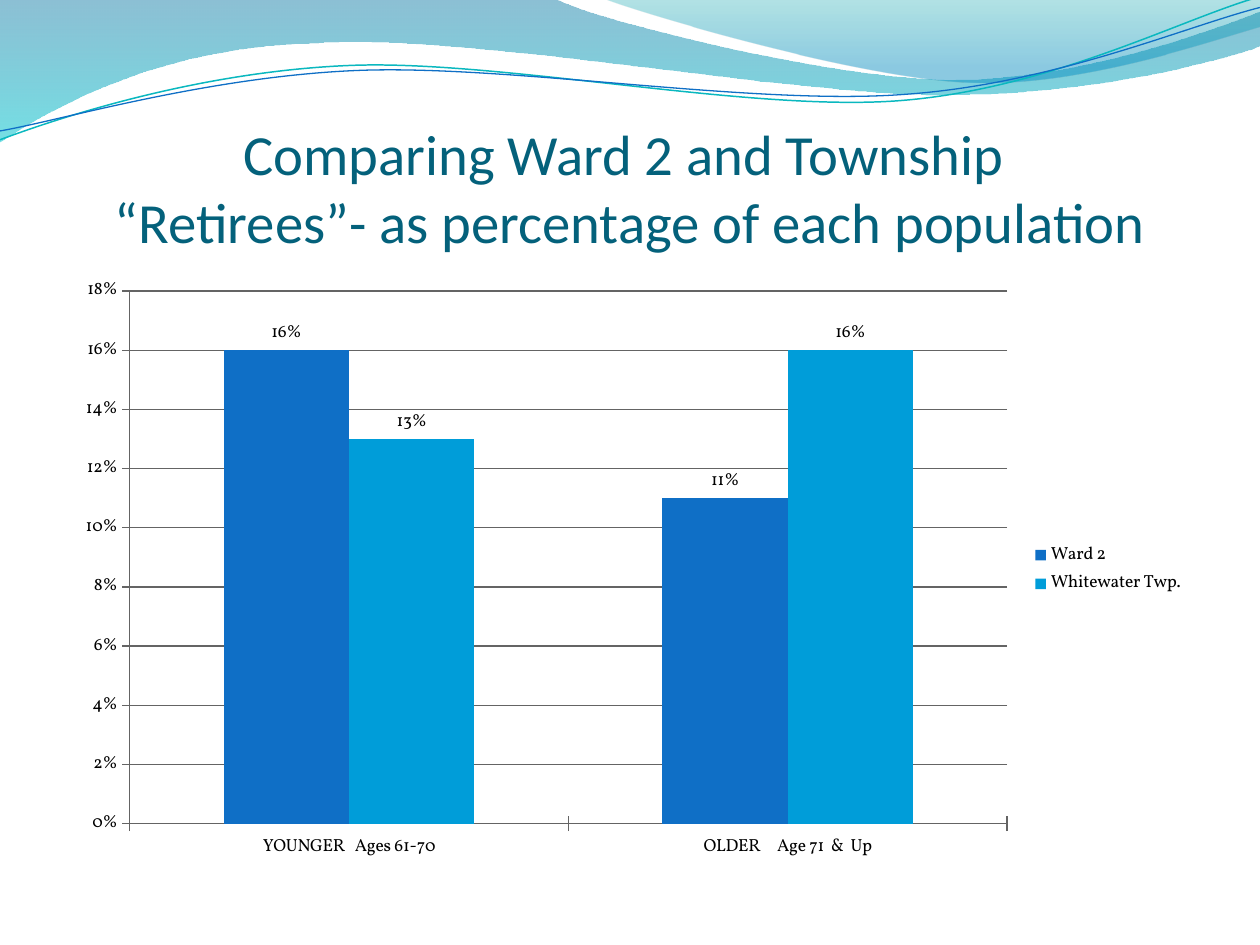
from math import cos, radians, sin

from lxml import etree
from pptx import Presentation
from pptx.chart.data import CategoryChartData
from pptx.dml.color import RGBColor
from pptx.enum.chart import XL_CHART_TYPE, XL_LABEL_POSITION, XL_LEGEND_POSITION, XL_TICK_MARK
from pptx.enum.text import MSO_ANCHOR, PP_ALIGN
from pptx.oxml.ns import qn
from pptx.util import Inches, Pt

CENTER, BOTTOM = PP_ALIGN.CENTER, MSO_ANCHOR.BOTTOM
COLUMNS = XL_CHART_TYPE.COLUMN_CLUSTERED
RIGHT, CROSS = XL_LEGEND_POSITION.RIGHT, XL_TICK_MARK.CROSS
OUTSIDE = XL_LABEL_POSITION.OUTSIDE_END
TILT = 2.7
rgb = RGBColor.from_string

prs = Presentation()
prs.slide_width, prs.slide_height = Inches(10), Inches(7.5)
col, row = prs.slide_width / 10, prs.slide_height / 7.5
s = prs.slides.add_slide(prs.slide_layouts[6])


def add_wave(shapes, start, segments, close=False, tilt=0, center=(0, 0)):
    co, si = cos(radians(tilt)), sin(radians(tilt))
    cx, cy = center
    placed = []
    for seg in [start] + segments:
        pairs = [(x - cx, y - cy) for x, y in zip(seg[::2], seg[1::2])]
        placed.append([(round((cx + x * co - y * si) * col), round((cy + x * si + y * co) * row))
                       for x, y in pairs])
    fb = shapes.build_freeform(*placed[0][0])
    fb.add_line_segments([points[-1] for points in placed[1:]], close=close)
    sp = fb.convert_to_shape()
    for node, points in zip(list(sp.element.spPr.iter(qn("a:lnTo"))), placed[1:]):
        if len(points) == 3:
            curve = etree.Element(qn("a:cubicBezTo"))
            for x, y in points:
                etree.SubElement(curve, qn("a:pt"), x=str(x - sp.left), y=str(y - sp.top))
            node.getparent().replace(node, curve)
    sp.rotation = -tilt
    sp.shadow.inherit = False
    return sp


def add_text(text, left, top, width, height, size, font, color, align, anchor):
    sp = s.shapes.add_textbox(int(left * col), int(top * row), int(width * col), int(height * row))
    tf = sp.text_frame
    tf.word_wrap = True
    tf.vertical_anchor = anchor
    tf.margin_left = tf.margin_right = tf.margin_bottom = 0
    p = tf.paragraphs[0]
    p.alignment = align
    for i, line in enumerate(text.split("\n")):
        if i:
            p.add_line_break()
        r = p.add_run()
        r.text = line
        r.font.size, r.font.name = Pt(size), font
        r.font.color.rgb = rgb(color)


bands = [
    ((0, 0), [(4.4, -0.01), (4.76, 0.17, 6.64, 0.63, 7.58, 0.63),
              (8.53, 0.63, 9.58, 0.26, 10, 0.09), (10.01, 0.36),
              (9.83, 0.44, 8.7, 0.76, 7.46, 0.75), (6.22, 0.75, 3.82, 0.28, 2.57, 0.34),
              (1.29, 0.36, 0.46, 0.83, -0.01, 1.13), (0, 0)],
     [(0, "0074A1", 45), (1, "00C6CF", 55)]),
    ((4.79, -0.01), [(5.09, 0.11, 6.82, 0.62, 7.69, 0.65),
                     (8.56, 0.69, 9.61, 0.32, 10, 0.21), (10, 0), (4.79, -0.01)],
     [(0, "00A1A9", 30), (0.8, "008BBF", 45)]),
]
for start, segments, stops in bands:
    sp = add_wave(s.shapes, start, segments, close=True)
    sp.line.fill.background()
    sp.fill.gradient()
    sp.fill.gradient_angle = 270
    for stop, (position, color, opacity) in zip(sp.fill.gradient_stops, stops):
        stop.position = position
        stop.color.rgb = rgb(color)
    for clr, (position, color, opacity) in zip(sp.element.spPr.iter(qn("a:srgbClr")), stops):
        etree.SubElement(clr, qn("a:alpha"), val=str(opacity * 1000))

lines = [
    ((0, 1.11), [(0.48, 0.93, 1.58, 0.57, 2.77, 0.52), (3.95, 0.47, 5.93, 0.89, 7.13, 0.8),
                 (8.33, 0.71, 9.38, 0.15, 9.98, -0.02)], "0AB8BF", 0.85),
    ((0, 1.04), [(0.47, 0.96, 1.64, 0.61, 2.83, 0.56), (4.03, 0.51, 5.97, 0.84, 7.17, 0.75),
                 (8.36, 0.67, 9.41, 0.21, 10, 0.06)], "0F6FC6", 0.75),
]
group = s.shapes.add_group_shape()
for start, segments, color, width in lines:
    end = segments[-1][-2:]
    middle = ((start[0] + end[0]) / 2, (start[1] + end[1]) / 2)
    sp = add_wave(group.shapes, start, segments, tilt=TILT, center=middle)
    sp.fill.background()
    sp.line.color.rgb = rgb(color)
    sp.line.width = Pt(width)

add_text("Comparing Ward 2 and Township \n“Retirees”- as percentage of each population",
         left=0.5, top=0.77, width=9, height=1.25, size=32.4, font="Calibri",
         color="04617B", align=CENTER, anchor=BOTTOM)

data = CategoryChartData(number_format="0%")
data.categories = ["YOUNGER   Ages 61-70", "OLDER     Age 71  &  Up"]
data.add_series("Ward 2 ", (0.16, 0.11))
data.add_series("Whitewater Twp.", (0.13, 0.16))
chart = s.shapes.add_chart(COLUMNS, int(0.5 * col), int(2.12 * row),
                           int(9 * col), int(4.8 * row), data).chart
chart.has_title = False
chart.font.size, chart.font.name = Pt(10), "Vollkorn"
chart.font.color.rgb = rgb("000000")
chart.has_legend = True
chart.legend.position = RIGHT
chart.legend.include_in_layout = False

values = chart.value_axis
values.minimum_scale, values.maximum_scale, values.major_unit = 0, 0.18, 0.02
values.has_major_gridlines = True
values.tick_labels.number_format = "0%"
values.tick_labels.number_format_is_linked = False
for axis in (chart.category_axis, values):
    axis.major_tick_mark = CROSS
for line in (chart.category_axis.format.line, values.format.line, values.major_gridlines.format.line):
    line.color.rgb = rgb("646464")
    line.width = Pt(0.75)

plot = chart.plots[0]
plot.gap_width, plot.overlap = 150, 0
plot.vary_by_categories = False
for series, color in zip(plot.series, ("0F6FC6", "009DD9")):
    series.format.fill.solid()
    series.format.fill.fore_color.rgb = rgb(color)
    labels = series.data_labels
    labels.show_value = True
    labels.number_format = "0%"
    labels.number_format_is_linked = False
    labels.position = OUTSIDE

prs.save("out.pptx")
